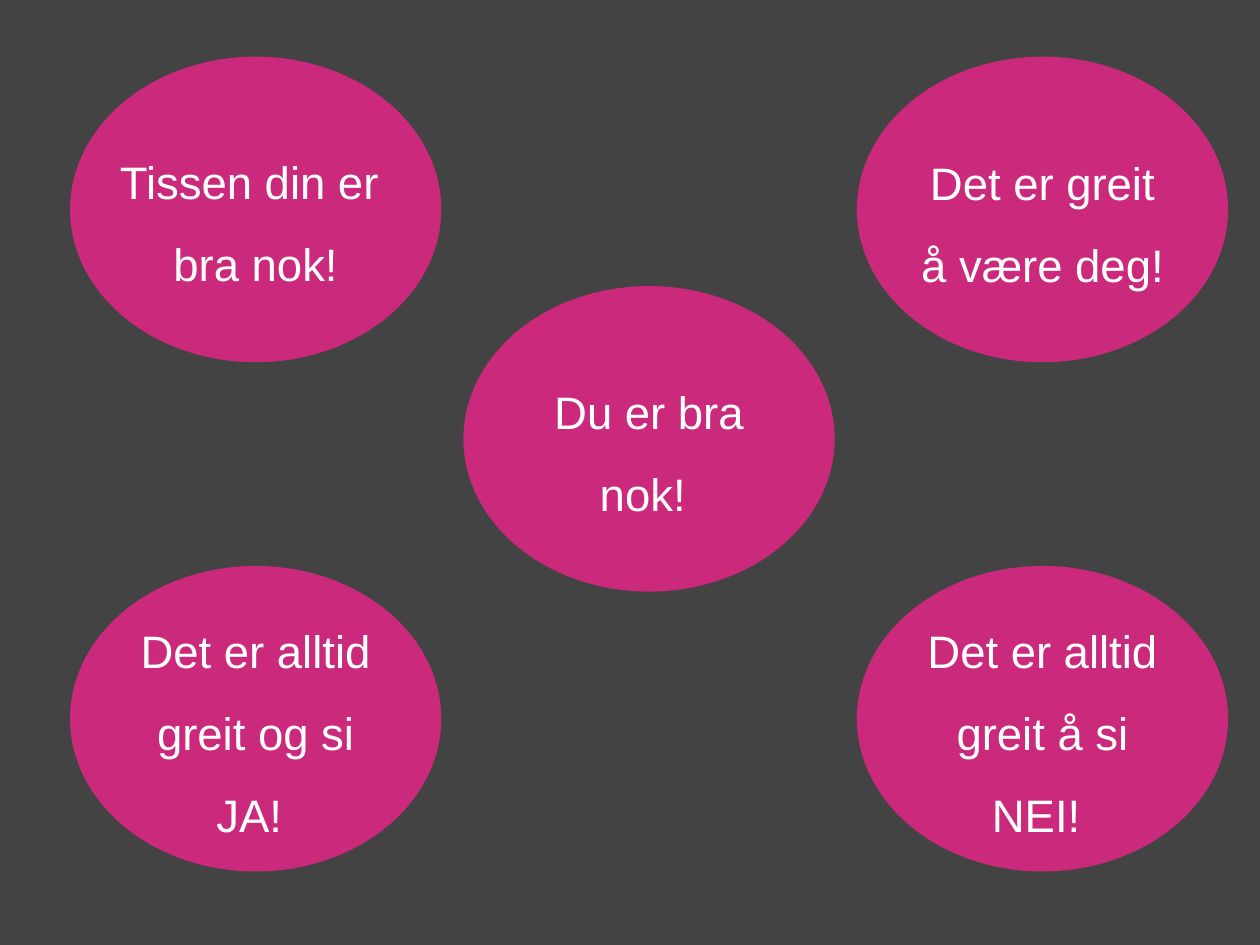
from pptx import Presentation
from pptx.dml.color import RGBColor
from pptx.enum.shapes import MSO_SHAPE
from pptx.enum.text import MSO_ANCHOR, MSO_AUTO_SIZE, PP_ALIGN
from pptx.util import Inches, Pt

LEFT, CENTRE, RIGHT = (0.79 + 4.44 * column for column in range(3))
TOP, MIDDLE, BOTTOM = 0.64, 3.23, 6.39
BUBBLE_SIZE = 4.19, 3.45
INSET = Inches(0.06)
FRAME_FORMAT = {
    "vertical_anchor": MSO_ANCHOR.MIDDLE,
    "margin_left": INSET,
    "margin_top": INSET,
    "margin_right": INSET,
    "margin_bottom": INSET,
}
PARAGRAPH_FORMAT = {"alignment": PP_ALIGN.CENTER, "line_spacing": 1.5}
FONT_FORMAT = {"name": "Arial", "size": Pt(37)}


def paint(fill, colour):
    fill.solid()
    fill.fore_color.rgb = RGBColor.from_string(colour)


def apply_format(target, values):
    for attribute, value in values.items():
        setattr(target, attribute, value)


def write_message(frame, message, wrap=True):
    apply_format(frame, FRAME_FORMAT)
    frame.word_wrap = wrap
    frame.text = message
    for paragraph in frame.paragraphs:
        apply_format(paragraph, PARAGRAPH_FORMAT)
        for run in paragraph.runs:
            apply_format(run.font, FONT_FORMAT)
            paint(run.font.fill, "FFFFFF")


def add_bubble(slide, left, top, message=None):
    bubble = slide.shapes.add_shape(
        MSO_SHAPE.OVAL, *map(Inches, (left, top, *BUBBLE_SIZE)))
    bubble.shadow.inherit = False
    bubble.line.fill.background()
    paint(bubble.fill, "CB297B")
    if message:
        write_message(bubble.text_frame, message)


def add_label(slide, left, top, width, height, message):
    label = slide.shapes.add_textbox(*map(Inches, (left, top, width, height)))
    write_message(label.text_frame, message, wrap=False)
    label.text_frame.auto_size = MSO_AUTO_SIZE.SHAPE_TO_FIT_TEXT


def main():
    presentation = Presentation()
    presentation.slide_width = Inches(14.22)
    presentation.slide_height = Inches(10.67)
    slide = presentation.slides.add_slide(presentation.slide_layouts[6])
    paint(slide.background.fill, "434343")

    add_bubble(slide, LEFT, TOP)
    add_label(slide, 1.22, 1.55, 3.33, 1.62, "Tissen din er \nbra nok!")
    for left, top, message in (
        (RIGHT, BOTTOM, "Det er alltid greit å si NEI! "),
        (LEFT, BOTTOM, "Det er alltid greit og si JA! "),
        (CENTRE, MIDDLE, "Du er bra nok! "),
        (RIGHT, TOP, "Det er greit å være deg! "),
    ):
        add_bubble(slide, left, top, message)

    presentation.save("out.pptx")


if __name__ == "__main__":
    main()
